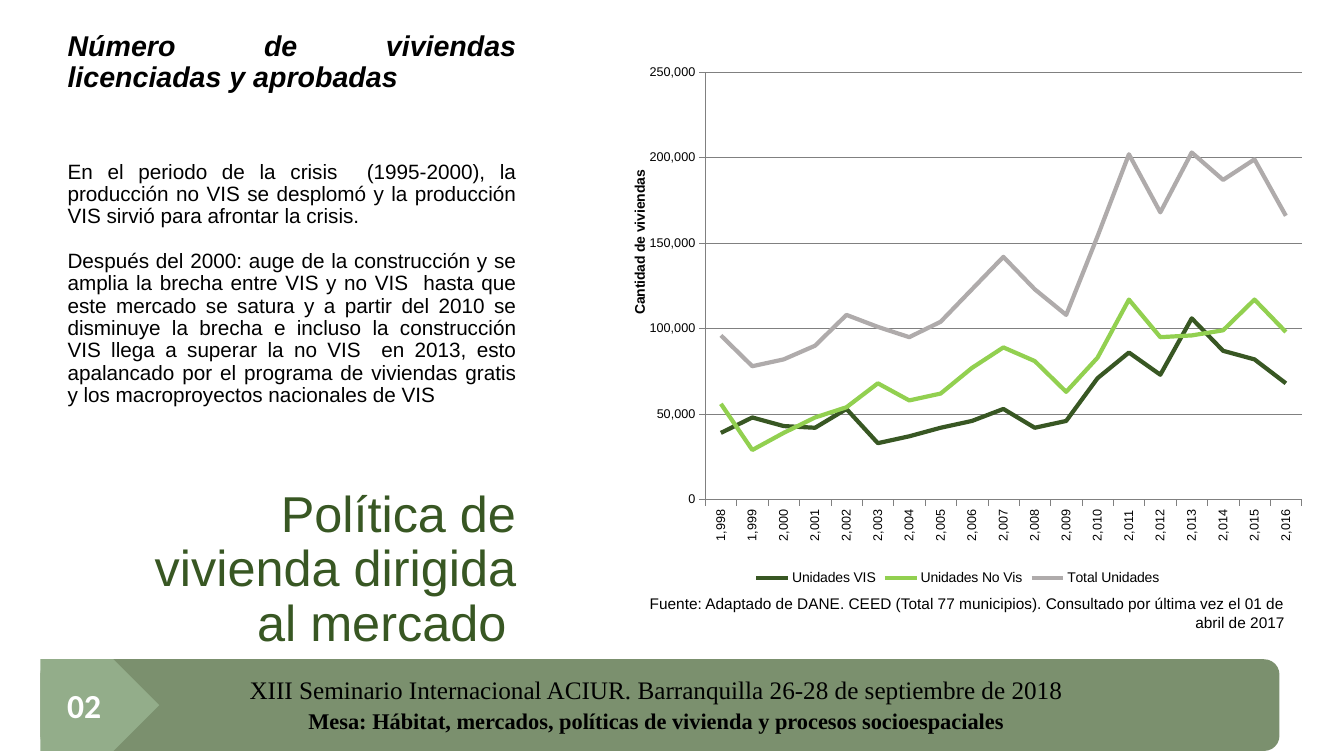
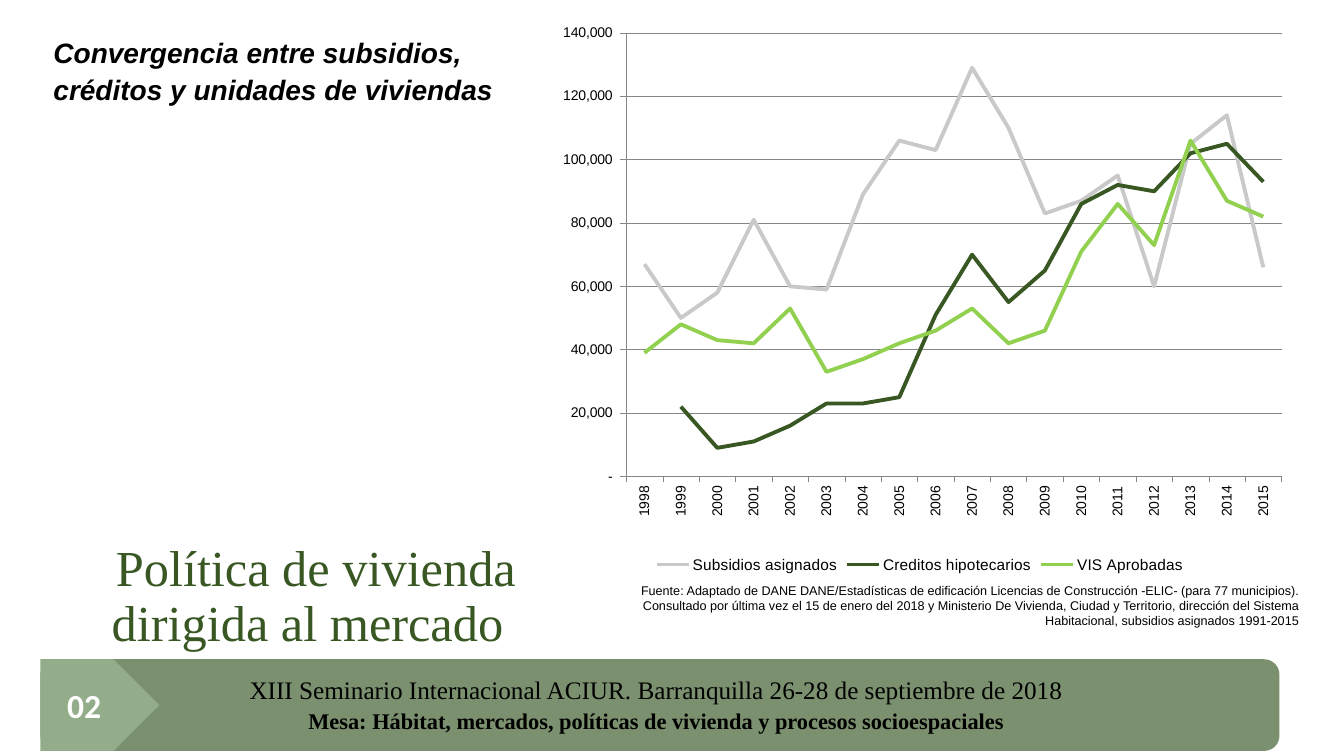
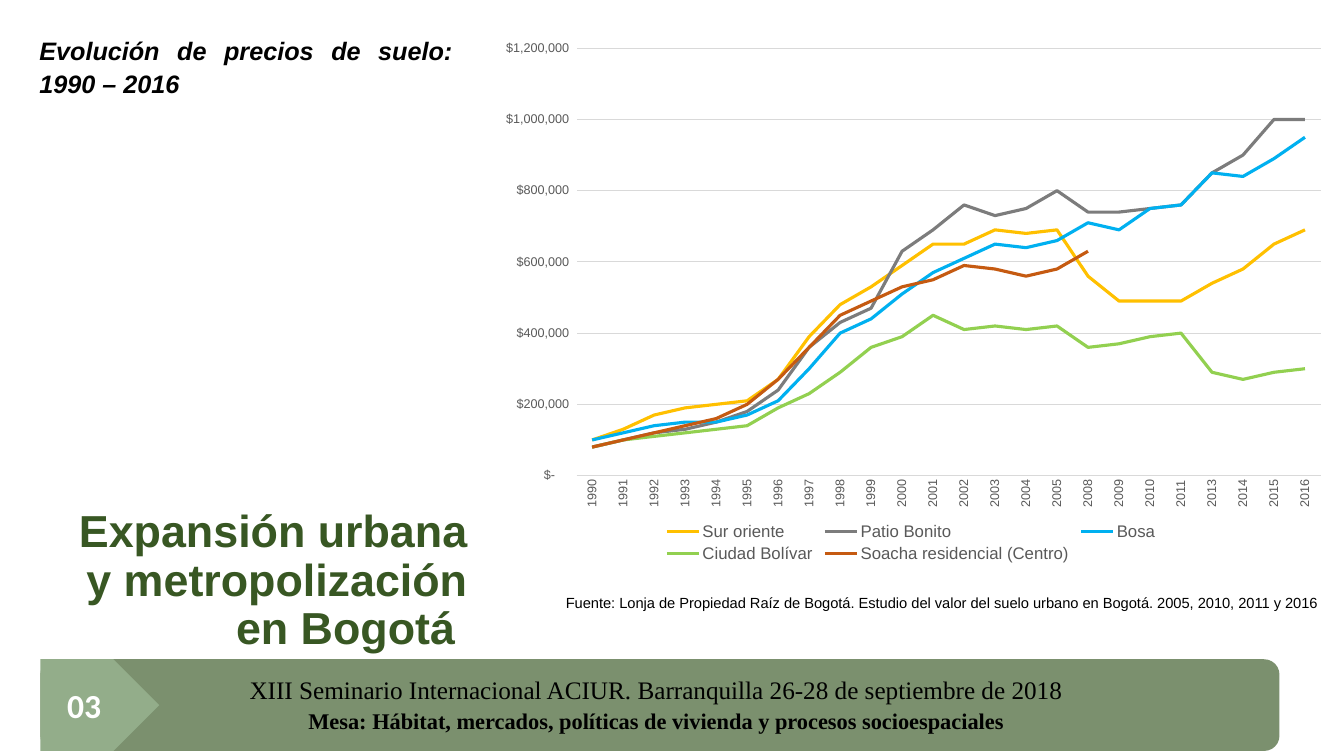
"""Build three slides on housing policy and land prices."""
from lxml import etree
from pptx import Presentation
from pptx import util as u
from pptx.chart.data import CategoryChartData
from pptx.dml.color import RGBColor
from pptx.enum import chart as charts, shapes, text
from pptx.oxml.ns import qn

ALIGN = text.PP_ALIGN
GREEN, LIME, BLACK = "385723", "92D050", "000000"


def color(value):
    """Turn a hex string into a colour."""
    return RGBColor.from_string(value)


def scaled(values, factor):
    """Multiply the values, keeping the gaps."""
    return [None if value is None else value * factor for value in values]


class Deck:
    """Hold the shared style and the current slide."""

    font = "Arial"
    serif = "Times New Roman"
    event = "XIII Seminario Internacional ACIUR. Barranquilla 26-28 de septiembre de 2018 "
    table = "Mesa: Hábitat, mercados, políticas de vivienda y procesos socioespaciales"

    def __init__(self):
        """Open an empty wide presentation."""
        self.presentation = Presentation()
        self.presentation.slide_width = u.Inches(13.33)
        self.presentation.slide_height = u.Inches(7.5)
        self.slide = None

    def new_slide(self, number):
        """Start a slide with the shared footer."""
        layout = self.presentation.slide_layouts[1]
        self.slide = self.presentation.slides.add_slide(layout)
        band = self.shape(shapes.MSO_SHAPE.ROUNDED_RECTANGLE, (0.4, 6.54, 12.29, 0.91), GREEN)
        fill = band.fill._xPr.find(qn("a:solidFill"))[0]
        etree.SubElement(fill, qn("a:alpha")).set("val", "66000")
        frame = self.text_box((1.58, 6.64, 9.92, 0.71))
        paragraph = self.paragraph(frame, ALIGN.CENTER)
        self.run(paragraph, self.event, 18, font=self.serif)
        paragraph = self.paragraph(frame, ALIGN.CENTER)
        self.run(paragraph, self.table, 16, font=self.serif, bold=True)
        self.run(paragraph, " ", 18, font=self.serif)
        self.shape(shapes.MSO_SHAPE.PENTAGON, (0.4, 6.54, 1.18, 0.91), "93AD8A")
        frame = self.text_box((0.43, 6.74, 0.81, 0.5))
        frame.vertical_anchor = text.MSO_ANCHOR.MIDDLE
        paragraph = self.paragraph(frame, ALIGN.CENTER)
        self.run(paragraph, number, 24, "FFFFFF", "Calibri", bold=True)

    def shape(self, kind, box, fill):
        """Add a plain filled shape."""
        shape = self.slide.shapes.add_shape(kind, *map(u.Inches, box))
        shape.shadow.inherit = False
        shape.fill.solid()
        shape.fill.fore_color.rgb = color(fill)
        shape.line.fill.background()
        return shape

    def text_box(self, box):
        """Add a wrapping text box."""
        frame = self.slide.shapes.add_textbox(*map(u.Inches, box)).text_frame
        frame.word_wrap = True
        return frame

    def placeholder(self, shape, box, anchor):
        """Move a placeholder and return its text frame."""
        shape.left, shape.top, shape.width, shape.height = map(u.Inches, box)
        frame = shape.text_frame
        frame.auto_size = text.MSO_AUTO_SIZE.NONE
        frame.word_wrap = True
        frame.vertical_anchor = anchor
        return frame

    def paragraph(self, frame, align, spacing=None):
        """Return the next free paragraph."""
        first = frame.paragraphs[0]
        paragraph = frame.add_paragraph() if first.runs else first
        paragraph.alignment = align
        if spacing:
            paragraph.line_spacing = spacing
        return paragraph

    def run(self, paragraph, words, size, ink=BLACK, font=None, bold=False, italic=False):
        """Add one formatted run."""
        run = paragraph.add_run()
        run.text = words
        self.style(run.font, size, ink, font, bold)
        run.font.italic = italic

    def style(self, font, size, ink=BLACK, name=None, bold=False):
        """Format a font."""
        font.name = name or self.font
        font.size = u.Pt(size)
        font.bold = bold
        font.color.rgb = color(ink)

    def title(self, box, runs, bold=False):
        """Fill the title with (words, size, font) runs."""
        frame = self.placeholder(self.slide.shapes.title, box, text.MSO_ANCHOR.BOTTOM)
        paragraph = self.paragraph(frame, ALIGN.RIGHT, 0.9)
        for words, size, font in runs:
            self.run(paragraph, words, size, GREEN, font, bold)

    def body(self, box, heading, size, align, spacing, details=()):
        """Fill the body with a heading and its details."""
        frame = self.placeholder(self.slide.placeholders[1], box, text.MSO_ANCHOR.TOP)
        self.body_paragraph(frame, heading, size, align, spacing, 40 if details else 8, True)
        for words in details:
            self.body_paragraph(frame, words, 14.8, align, spacing, 8, False)

    def body_paragraph(self, frame, words, size, align, spacing, after, strong):
        """Add a body paragraph without a bullet."""
        paragraph = self.paragraph(frame, align, spacing)
        paragraph.space_before, paragraph.space_after = u.Pt(8), u.Pt(after)
        properties = paragraph._p.get_or_add_pPr()
        properties.set("marL", "0")
        properties.set("indent", "0")
        etree.SubElement(properties, qn("a:buNone"))
        self.run(paragraph, words, size, bold=strong, italic=strong)

    def source(self, box, words, size):
        """Add the source line below a chart."""
        self.run(self.paragraph(self.text_box(box), ALIGN.RIGHT), words, size)

    def place(self, element, index, target=None, **sizes):
        """Set the manual layout of a chart part."""
        for old in element.findall(qn("c:layout")):
            element.remove(old)
        layout = etree.Element(qn("c:layout"))
        manual = etree.SubElement(layout, qn("c:manualLayout"))
        settings = {"layoutTarget": target} if target else {}
        settings.update(xMode="edge", yMode="edge", **sizes)
        for name, value in settings.items():
            etree.SubElement(manual, qn("c:" + name)).set("val", str(value))
        element.insert(index, layout)

    def chart(self, box, categories, series, plot, scale, number_format, label_size=9,
              legend_size=10, ink=BLACK, grid="808080", grid_width=0.25, line_width=3.0,
              ticks=True, axis_title=None, legend_box=None):
        """Add a line chart from (name, colour, values) series."""
        data = CategoryChartData()
        data.categories = categories
        for name, _, values in series:
            data.add_series(name, values)
        kind = charts.XL_CHART_TYPE.LINE
        chart = self.slide.shapes.add_chart(kind, *map(u.Inches, box), data).chart
        chart.has_title = False
        self.style(chart.font, 10)
        chart.plots[0].vary_by_categories = False
        for line, (_, ink_line, _) in zip(chart.plots[0].series, series):
            line.smooth = False
            line.format.line.color.rgb = color(ink_line)
            line.format.line.width = u.Pt(line_width)

        mark = charts.XL_TICK_MARK.OUTSIDE if ticks else charts.XL_TICK_MARK.NONE
        for axis in (chart.category_axis, chart.value_axis):
            axis.major_tick_mark = mark
            axis.minor_tick_mark = charts.XL_TICK_MARK.NONE
            self.style(axis.tick_labels.font, label_size, ink)
            axis.format.line.color.rgb = color(grid)
            axis.format.line.width = u.Pt(grid_width)
        labels = chart._chartSpace.xpath(".//c:catAx/c:txPr/a:bodyPr")[0]
        labels.set("rot", "-5400000")
        labels.set("vert", "horz")

        axis = chart.value_axis
        axis.minimum_scale = 0
        axis.maximum_scale, axis.major_unit = scale
        axis.tick_labels.number_format = number_format
        axis.tick_labels.number_format_is_linked = False
        axis.has_major_gridlines = True
        axis.major_gridlines.format.line.color.rgb = color(grid)
        axis.major_gridlines.format.line.width = u.Pt(grid_width)
        if not ticks:
            axis.format.line.fill.background()
        if axis_title:
            paragraph = axis.axis_title.text_frame.paragraphs[0]
            self.run(paragraph, axis_title, 10, bold=True)
            self.place(axis.axis_title._element, 1, x=0.03, y=0.25)

        chart.has_legend = True
        chart.legend.position = charts.XL_LEGEND_POSITION.BOTTOM
        chart.legend.include_in_layout = False
        self.style(chart.legend.font, legend_size, ink)
        if legend_box:
            self.place(chart.legend._element, 1, **dict(zip("xywh", legend_box)))
        area = chart._chartSpace.xpath(".//c:plotArea")[0]
        self.place(area, 0, "inner", **dict(zip("xywh", plot)))


def licensed_homes(deck, vis):
    """Build the slide on licensed homes."""
    deck.new_slide("02")
    deck.title((0.92, 4.77, 4.3, 1.75), [
        ("Política de vivienda dirigida al mercado", 36, deck.font), (" ", 28, deck.serif)])
    deck.body((0.57, 0.27, 4.65, 4.17), "Número de viviendas licenciadas y aprobadas", 20.4,
              ALIGN.JUSTIFY, 0.9, [
        "En el periodo de la crisis  (1995-2000), la producción no VIS se desplomó y la "
        "producción VIS sirvió para afrontar la crisis.",
        "Después del 2000: auge de la construcción y se amplia la brecha entre VIS y no VIS  "
        "hasta que este mercado se satura y a partir del 2010 se disminuye la brecha e incluso "
        "la construcción VIS llega a superar la no VIS  en 2013, esto apalancado por el programa "
        "de viviendas gratis y los macroproyectos nacionales de VIS"])
    other = [56, 29, 39, 48, 54, 68, 58, 62, 77, 89, 81, 63, 83, 117, 95, 96, 99, 117, 98]
    total = [96, 78, 82, 90, 108, 101, 95, 104, 123, 142, 123, 108, 154, 202, 168, 203, 187,
             199, 166]
    deck.chart((6.02, 0.27, 6.96, 5.58), [f"{year:,}" for year in range(1998, 2017)], [
        ("Unidades VIS", GREEN, scaled(vis, 1000)),
        ("Unidades No Vis", LIME, scaled(other, 1000)),
        ("Total Unidades", "AFABAB", scaled(total, 1000)),
    ], (0.14, 0.08, 0.85, 0.76), (250000, 50000), "#,##0", axis_title="Cantidad de viviendas")
    deck.source((6.17, 5.85, 6.67, 0.47),
                "Fuente: Adaptado de DANE. CEED (Total 77 municipios). Consultado por última vez "
                "el 01 de abril de 2017", 11)


def subsidies_and_loans(deck, vis):
    """Build the slide on subsidies, loans and homes."""
    deck.new_slide("02")
    deck.title((0.92, 4.77, 4.3, 1.75),
               [("Política de vivienda dirigida al mercado ", 36, deck.serif)])
    deck.body((0.43, 0.27, 4.79, 4.71),
              "Convergencia entre subsidios, créditos y unidades de viviendas", 20,
              ALIGN.LEFT, 1.1)
    deck.source((5.64, 5.73, 7.34, 0.56),
                "Fuente: Adaptado de DANE DANE/Estadísticas de edificación Licencias de "
                "Construcción -ELIC- (para 77 municipios). Consultado por última vez el 15 de "
                "enero del 2018 y Ministerio De Vivienda, Ciudad y Territorio, dirección del "
                "Sistema Habitacional, subsidios asignados 1991-2015", 9)
    subsidies = [67, 50, 58, 81, 60, 59, 89, 106, 103, 129, 110, 83, 87, 95, 60, 105, 114, 66]
    loans = [None, 22, 9, 11, 16, 23, 23, 25, 51, 70, 55, 65, 86, 92, 90, 102, 105, 93]
    deck.chart((5.39, 0.16, 7.47, 5.57), [str(year) for year in range(1998, 2016)], [
        ("Subsidios asignados", "C9C9C9", scaled(subsidies, 1000)),
        ("Creditos hipotecarios", GREEN, scaled(loans, 1000)),
        ("VIS Aprobadas", LIME, scaled(vis[:-1], 1000)),
    ], (0.11, 0.03, 0.87, 0.79), (140000, 20000),
        r'_(* #,##0_);_(* \(#,##0\);_(* "-"_);_(@_)',
        label_size=10, legend_size=11, grid="868686", line_width=2.75)


def land_prices(deck):
    """Build the slide on land prices."""
    deck.new_slide("03")
    deck.title((0.44, 4.79, 4.3, 1.75),
               [("Expansión urbana y metropolización en Bogotá ", 32, deck.font)], bold=True)
    deck.body((0.29, 0.27, 4.3, 4.17), "Evolución de precios de suelo: 1990 – 2016", 18,
              ALIGN.JUSTIFY, 1.1)
    years = [str(year) for year in range(1990, 2017) if year not in (2006, 2007, 2012)]
    prices = [
        ("Sur oriente", "FFC000", [10, 13, 17, 19, 20, 21, 27, 39, 48, 53, 59, 65, 65, 69, 68,
                                   69, 56, 49, 49, 49, 54, 58, 65, 69]),
        ("Patio Bonito", "7C7C7C", [8, 10, 12, 13, 15, 18, 24, 36, 43, 47, 63, 69, 76, 73, 75,
                                    80, 74, 74, 75, 76, 85, 90, 100, 100]),
        ("Bosa", "00B0F0", [10, 12, 14, 15, 15, 17, 21, 30, 40, 44, 51, 57, 61, 65, 64, 66, 71,
                            69, 75, 76, 85, 84, 89, 95]),
        ("Ciudad Bolívar", LIME, [8, 10, 11, 12, 13, 14, 19, 23, 29, 36, 39, 45, 41, 42, 41, 42,
                                  36, 37, 39, 40, 29, 27, 29, 30]),
        ("Soacha residencial (Centro)", "C55A11", [8, 10, 12, 14, 16, 20, 27, 36, 45, 49, 53, 55,
                                                   59, 58, 56, 58, 63] + [None] * 7),
    ]
    deck.chart((4.89, 0.32, 8.29, 5.3), years,
               [(name, ink, scaled(values, 10000)) for name, ink, values in prices],
               (0.1, 0.03, 0.89, 0.8), (1200000, 200000),
               r'_-"$"* #,##0_-;\-"$"* #,##0_-;_-"$"* "-"??_-;_-@_-',
               legend_size=12, ink="595959", grid="D9D9D9", grid_width=0.75, line_width=2.25,
               ticks=False, legend_box=(0.2, 0.91, 0.6, 0.09))
    deck.source((4.89, 5.84, 8.29, 0.28),
                "Fuente: Lonja de Propiedad Raíz de Bogotá. Estudio del valor del suelo urbano en "
                "Bogotá. 2005, 2010, 2011 y 2016", 10.5)


def main():
    """Build and save the presentation."""
    deck = Deck()
    vis = [39, 48, 43, 42, 53, 33, 37, 42, 46, 53, 42, 46, 71, 86, 73, 106, 87, 82, 68]
    licensed_homes(deck, vis)
    subsidies_and_loans(deck, vis)
    land_prices(deck)
    deck.presentation.save("out.pptx")


if __name__ == "__main__":
    main()
